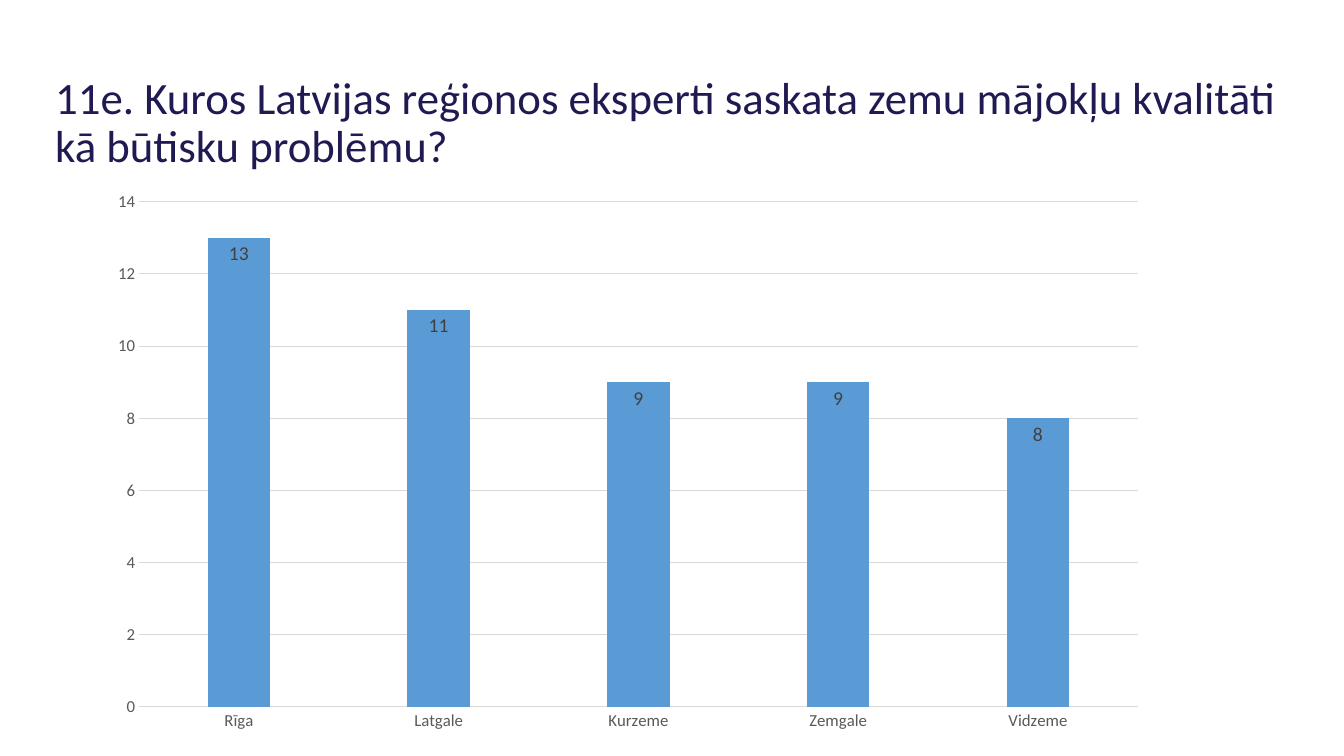
from pptx import Presentation
from pptx.chart.data import CategoryChartData
from pptx.dml.color import RGBColor
from pptx.enum.chart import XL_CHART_TYPE, XL_LABEL_POSITION, XL_TICK_MARK
from pptx.enum.text import MSO_ANCHOR, MSO_AUTO_SIZE, PP_ALIGN
from pptx.util import Cm, Pt

FONT = "Calibri"
NAVY, BLUE, GRID_GREY = "1F1A51", "5B9BD5", "D9D9D9"
AXIS_GREY, LABEL_GREY = "595959", "404040"

QUESTION = ("11e. Kuros Latvijas reģionos eksperti saskata zemu mājokļu "
            "kvalitāti kā būtisku problēmu?")
EXPERTS_BY_REGION = {"Rīga": 13, "Latgale": 11, "Kurzeme": 9,
                     "Zemgale": 9, "Vidzeme": 8}


def color(hex_code):
    return RGBColor.from_string(hex_code)


def apply(target, formats):
    for name, value in formats.items():
        setattr(target, name, value)


def style_font(font, size, hex_code):
    apply(font, {"name": FONT, "size": Pt(size), "bold": False})
    font.color.rgb = color(hex_code)


def style_line(line, hex_code):
    line.width = Pt(0.75)
    line.color.rgb = color(hex_code)


def add_question(slide, left, top, width, height):
    question = slide.shapes.title
    apply(question, {"left": left, "top": top, "width": width, "height": height})
    frame = question.text_frame
    frame.text = QUESTION
    inset = Cm(0.25)
    apply(frame, {"word_wrap": True, "auto_size": MSO_AUTO_SIZE.NONE,
                  "vertical_anchor": MSO_ANCHOR.TOP,
                  "margin_left": inset, "margin_right": inset,
                  "margin_top": inset, "margin_bottom": inset})
    paragraph = frame.paragraphs[0]
    apply(paragraph, {"alignment": PP_ALIGN.LEFT, "line_spacing": 0.9,
                      "space_before": Pt(0)})
    style_font(paragraph.runs[0].font, 32, NAVY)


def add_region_chart(slide, left, top, width, height):
    region_data = CategoryChartData(number_format="General")
    region_data.categories = list(EXPERTS_BY_REGION)
    region_data.add_series("Series 1", list(EXPERTS_BY_REGION.values()))
    chart = slide.shapes.add_chart(XL_CHART_TYPE.COLUMN_CLUSTERED,
                                   left, top, width, height, region_data).chart
    apply(chart, {"has_legend": False, "has_title": False})
    style_font(chart.font, 10, "000000")

    # Axes and gridlines
    regions, counts = chart.category_axis, chart.value_axis
    for axis in (regions, counts):
        apply(axis, {"major_tick_mark": XL_TICK_MARK.NONE,
                     "minor_tick_mark": XL_TICK_MARK.NONE})
        style_font(axis.tick_labels.font, 12, AXIS_GREY)
    apply(counts, {"minimum_scale": 0, "maximum_scale": 14, "major_unit": 2,
                   "has_major_gridlines": True})
    style_line(regions.format.line, GRID_GREY)
    style_line(counts.major_gridlines.format.line, GRID_GREY)
    counts.format.line.fill.background()

    # Columns and their values
    columns = chart.plots[0]
    apply(columns, {"gap_width": 219, "overlap": -27, "vary_by_categories": False})
    experts = columns.series[0]
    experts.format.fill.solid()
    experts.format.fill.fore_color.rgb = color(BLUE)
    values = experts.data_labels
    apply(values, {"show_value": True, "position": XL_LABEL_POSITION.INSIDE_END})
    style_font(values.font, 14, LABEL_GREY)


def main():
    deck = Presentation()
    apply(deck, {"slide_width": Cm(33.87), "slide_height": Cm(19.05)})
    slide = deck.slides.add_slide(deck.slide_layouts[5])
    add_question(slide, Cm(1.14), Cm(1.65), Cm(31.55), Cm(2.13))
    add_region_chart(slide, Cm(2.44), Cm(4.55), Cm(26.77), Cm(14.15))
    deck.save("out.pptx")


if __name__ == "__main__":
    main()
